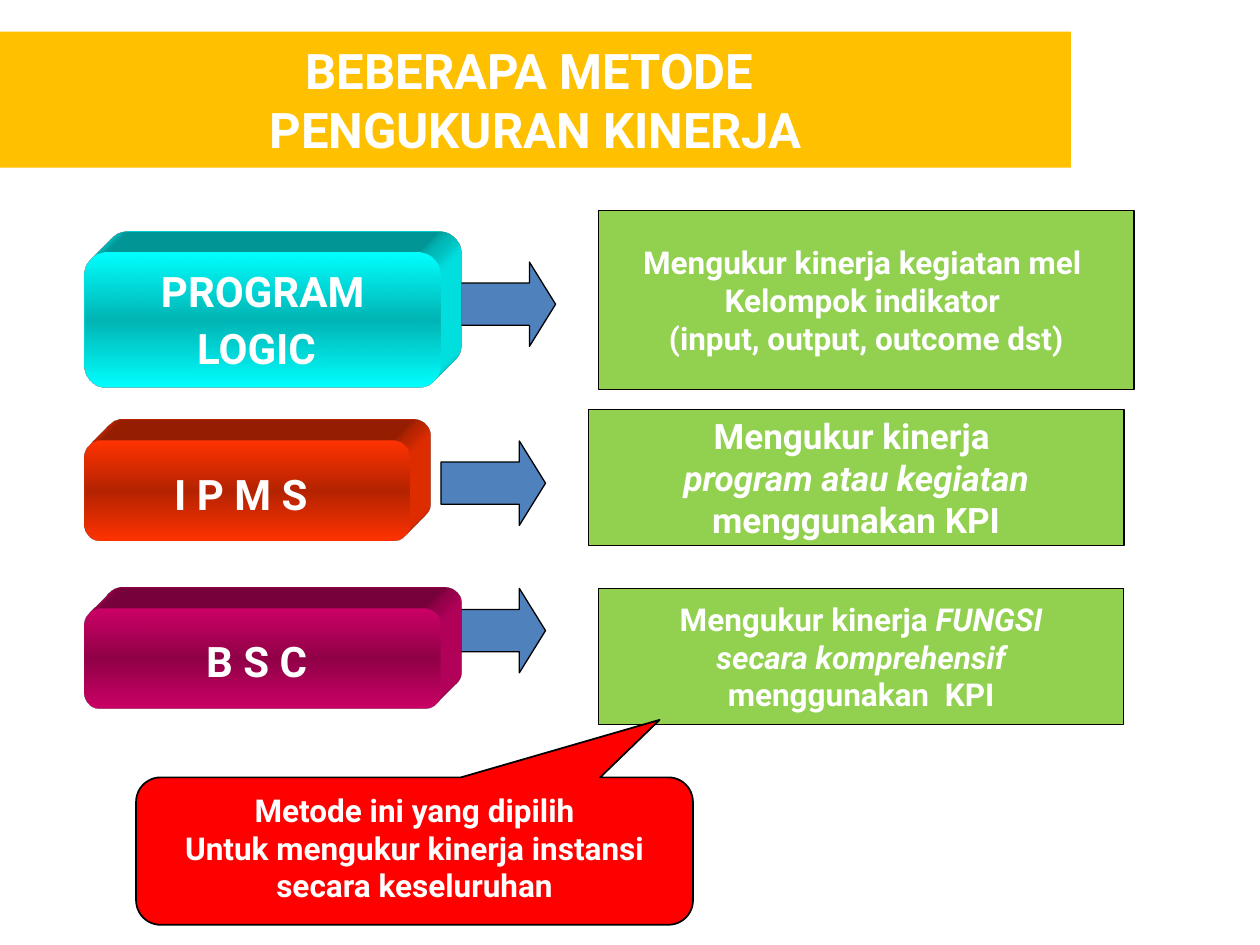
from copy import deepcopy
from dataclasses import dataclass

from lxml.etree import fromstring
from pptx import Presentation
from pptx.dml.color import RGBColor
from pptx.enum.shapes import MSO_SHAPE
from pptx.enum.text import MSO_ANCHOR, MSO_AUTO_SIZE, PP_ALIGN
from pptx.oxml.ns import nsdecls, qn
from pptx.util import Inches, Pt


@dataclass(frozen=True)
class Theme:
    font: str = "Roboto"
    text: str = "FFFFFF"
    outline: str = "000000"
    banner: str = "FFC000"
    arrow: str = "4F81BD"
    description: str = "92D050"
    callout: str = "FF0000"
    logic: str = "00FFFF"
    ipms: str = "FF3300"
    bsc: str = "CC0066"
    title_size: int = 28
    method_size: int = 24
    large_size: int = 20
    body_size: int = 18


def write_text(frame, paragraphs, *, theme, size, anchor=MSO_ANCHOR.MIDDLE,
               wrap=True, tail_size=None):
    """Write centred bold text; *stars* mark italics, "\\v" breaks a line."""
    frame.word_wrap = wrap
    frame.auto_size = MSO_AUTO_SIZE.NONE
    frame.vertical_anchor = anchor

    def add_run(paragraph, text, points, italic=False):
        run = paragraph.add_run()
        run.text = text
        font = run.font
        font.name, font.size = theme.font, Pt(points)
        font.bold, font.italic = True, italic
        font.color.rgb = RGBColor.from_string(theme.text)

    for index, content in enumerate(paragraphs):
        paragraph = frame.paragraphs[0] if index == 0 else frame.add_paragraph()
        paragraph.alignment = PP_ALIGN.CENTER
        for row, line in enumerate(content.split("\v")):
            if row:
                paragraph.add_line_break()
            for part, text in enumerate(line.split("*")):
                if text:
                    add_run(paragraph, text, size, italic=part % 2 == 1)
    if tail_size:
        add_run(paragraph, " ", tail_size)


class SlideBuilder:
    def __init__(self, slide, theme):
        self.slide = slide
        self.theme = theme

    def _shape(self, kind, box, color=None, line_width=None):
        shape = self.slide.shapes.add_shape(kind, *map(Inches, box))
        shape.shadow.inherit = False
        if color:
            shape.fill.solid()
            shape.fill.fore_color.rgb = RGBColor.from_string(color)
        if line_width:
            shape.line.color.rgb = RGBColor.from_string(self.theme.outline)
            shape.line.width = Pt(line_width)
        else:
            shape.line.fill.background()
        return shape

    def title(self, text, box):
        title = self.slide.shapes.title
        title.left, title.top, title.width, title.height = map(Inches, box)
        title.fill.solid()
        title.fill.fore_color.rgb = RGBColor.from_string(self.theme.banner)
        write_text(title.text_frame, [text], theme=self.theme,
                   size=self.theme.title_size)

    def arrow(self, left, top):
        arrow = self._shape(MSO_SHAPE.RIGHT_ARROW, (left, top, 0.83, 0.67),
                            self.theme.arrow, 0.75)
        arrow.adjustments[1] = 0.31

    def description(self, paragraphs, box, size):
        panel = self._shape(MSO_SHAPE.RECTANGLE, box, self.theme.description, 0.75)
        write_text(panel.text_frame, paragraphs, theme=self.theme, size=size,
                   wrap=False)

    def callout(self, paragraphs, box):
        callout = self._shape(MSO_SHAPE.ROUNDED_RECTANGULAR_CALLOUT, box,
                              self.theme.callout, 1)
        callout.adjustments[0] = 0.44
        callout.adjustments[1] = -0.89
        write_text(callout.text_frame, paragraphs, theme=self.theme,
                   size=self.theme.body_size, anchor=MSO_ANCHOR.TOP)

    def method_block(self, paragraphs, box, color):
        block = self._shape(MSO_SHAPE.ROUNDED_RECTANGLE, box)
        self._shade_middle(block, color)
        self._extrude(block, color)
        frame = block.text_frame
        frame.margin_left = frame.margin_right = Inches(0.06)
        frame.margin_top = frame.margin_bottom = Inches(0.03)
        write_text(frame, paragraphs, theme=self.theme,
                   size=self.theme.method_size, tail_size=self.theme.title_size)

    @staticmethod
    def _shade_middle(shape, color):
        """Vertical gradient of one colour with a dark band halfway."""
        shape.fill.gradient()
        shape.fill.gradient_angle = 90
        for stop in shape.fill.gradient_stops:
            stop.color.rgb = RGBColor.from_string(color)
        stops = shape._element.spPr.find(qn("a:gradFill")).find(qn("a:gsLst"))
        middle = deepcopy(stops[0])
        middle.set("pos", "50000")
        middle[0].append(fromstring(f'<a:shade {nsdecls("a")} val="46000"/>'))
        stops.insert(1, middle)

    @staticmethod
    def _extrude(shape, color):
        """Give the block depth towards the top right."""
        ns = nsdecls("a")
        for xml in (
            f'<a:scene3d {ns}><a:camera prst="legacyObliqueTopRight"/>'
            '<a:lightRig rig="legacyFlat3" dir="b"/></a:scene3d>',
            f'<a:sp3d {ns} extrusionH="430200" prstMaterial="legacyMatte">'
            f'<a:extrusionClr><a:srgbClr val="{color}"/></a:extrusionClr></a:sp3d>',
        ):
            shape._element.spPr.append(fromstring(xml))


def main():
    theme = Theme()
    deck = Presentation()
    deck.slide_width, deck.slide_height = Inches(10), Inches(7.5)
    builder = SlideBuilder(deck.slides.add_slide(deck.slide_layouts[5]), theme)

    builder.title("BEBERAPA METODE \vPENGUKURAN KINERJA", (0, 0.25, 8.5, 1.08))

    # Arrows from each method to its description
    for left, top in ((3.58, 2.08), (3.5, 3.5), (3.5, 4.67)):
        builder.arrow(left, top)

    # What each method measures
    builder.description(
        ["Mengukur kinerja kegiatan mel ", "Kelompok indikator ",
         "(input, output, outcome dst)"],
        (4.75, 1.67, 4.25, 1.42), theme.body_size)
    builder.description(
        ["Mengukur kinerja ", "*program atau kegiatan*", "menggunakan KPI"],
        (4.67, 3.25, 4.25, 1.08), theme.large_size)
    builder.description(
        ["Mengukur kinerja *FUNGSI*", "*secara komprehensif*",
         "menggunakan  KPI"],
        (4.75, 4.67, 4.17, 1.08), theme.body_size)

    # Note on the chosen method
    builder.callout(
        ["Metode ini yang dipilih",
         "Untuk mengukur kinerja instansi secara keseluruhan"],
        (1.08, 6.17, 4.42, 1.17))

    # Methods, bottom to top
    builder.method_block(["B S C"], (0.67, 4.83, 2.83, 0.79), theme.bsc)
    builder.method_block(["I P M S"], (0.67, 3.5, 2.58, 0.79), theme.ipms)
    builder.method_block(["PROGRAM", "LOGIC"], (0.67, 2, 2.83, 1.08), theme.logic)

    deck.save("out.pptx")


if __name__ == "__main__":
    main()
